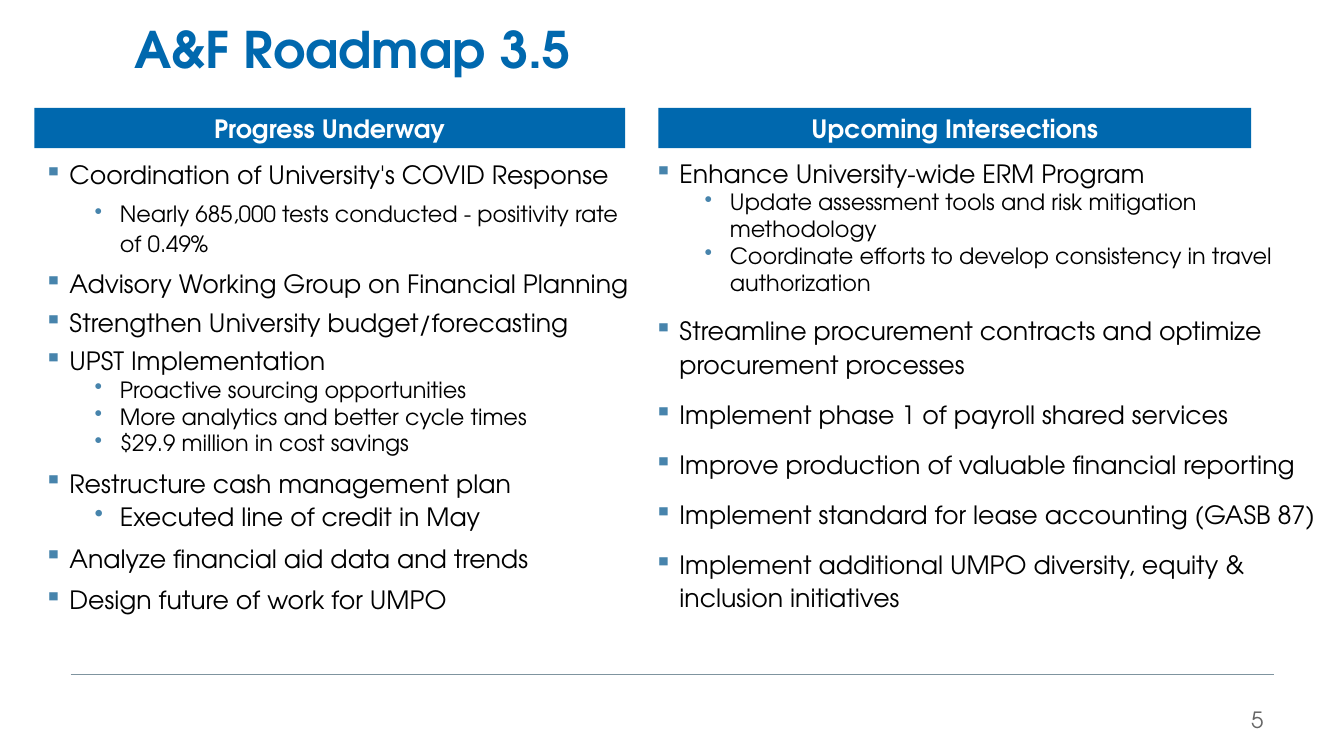
"""Build the A&F Roadmap 3.5 slide with two bulleted columns."""
from dataclasses import dataclass

from lxml.etree import SubElement
from pptx import Presentation
from pptx.dml.color import RGBColor
from pptx.enum.shapes import MSO_CONNECTOR, MSO_SHAPE
from pptx.enum.text import MSO_ANCHOR, MSO_AUTO_SIZE, PP_ALIGN
from pptx.oxml.ns import qn
from pptx.util import Pt

PX = 9144


@dataclass(frozen=True)
class Theme:
    font: str = "TeX Gyre Adventor"
    blue: str = "0068AE"
    bullet: str = "4784AC"
    rule: str = "7F949F"
    text: str = "000000"
    white: str = "FFFFFF"
    grey: str = "666666"
    title: int = 36
    body: int = 18
    detail: int = 16


@dataclass(frozen=True)
class Item:
    text: str
    level: int = 0
    size: int = Theme.body
    line: float = 1.1
    before: int = 6
    after: int = 0


def detail(text, size=Theme.detail, line=1.0, before=0, after=0):
    return Item(text, 1, size, line, before, after)


def spaced(text):
    return Item(text, after=6)


class Deck:
    def __init__(self, theme, width, height):
        self.theme = theme
        self.prs = Presentation()
        self.prs.slide_width, self.prs.slide_height = width * PX, height * PX
        self.s = self.prs.slides.add_slide(self.prs.slide_layouts[5])

    def box(self, x, y, w, h):
        return self.s.shapes.add_textbox(*(v * PX for v in (x, y, w, h)))

    def frame(self, sp, anchor):
        tf = sp.text_frame
        tf.word_wrap = True
        tf.auto_size = MSO_AUTO_SIZE.NONE
        tf.vertical_anchor = anchor
        return tf

    def run(self, p, text, size, color, bold=False):
        r = p.add_run()
        r.text = text
        r.font.name = self.theme.font
        r.font.size = Pt(size)
        r.font.bold = bold
        r.font.color.rgb = RGBColor.from_string(color)

    def title(self, text, x, y, w, h):
        sp = self.s.shapes.title
        sp.left, sp.top, sp.width, sp.height = (v * PX for v in (x, y, w, h))
        p = self.frame(sp, MSO_ANCHOR.MIDDLE).paragraphs[0]
        p.alignment = PP_ALIGN.LEFT
        self.run(p, text, self.theme.title, self.theme.blue, True)

    def header(self, text, x, y, w, h):
        sp = self.s.shapes.add_shape(MSO_SHAPE.RECTANGLE, *(v * PX for v in (x, y, w, h)))
        sp.shadow.inherit = False
        sp.fill.solid()
        sp.fill.fore_color.rgb = RGBColor.from_string(self.theme.blue)
        sp.line.fill.background()
        p = self.frame(sp, MSO_ANCHOR.BOTTOM).paragraphs[0]
        p.alignment = PP_ALIGN.CENTER
        p.line_spacing = 1.1
        p.space_after = Pt(4.5)
        self.run(p, text, self.theme.body, self.theme.white, True)

    def bullet(self, p, level):
        pPr = p._p.get_or_add_pPr()
        pPr.set("marL", str((25 + 50 * level) * PX))
        pPr.set("indent", str(-25 * PX))
        color = SubElement(pPr, qn("a:buClr"))
        SubElement(color, qn("a:srgbClr"), val=self.theme.bullet)
        SubElement(pPr, qn("a:buChar"), char="▪•"[level])

    def bullets(self, items, x, y, w, h):
        tf = self.frame(self.box(x, y, w, h), MSO_ANCHOR.TOP)
        for i, item in enumerate(items):
            p = tf.add_paragraph() if i else tf.paragraphs[0]
            p.level = item.level
            self.bullet(p, item.level)
            p.line_spacing = item.line
            p.space_before = Pt(item.before if i else 0)
            p.space_after = Pt(item.after)
            self.run(p, item.text, item.size, self.theme.text)

    def rule(self, x1, x2, y):
        sp = self.s.shapes.add_connector(MSO_CONNECTOR.STRAIGHT, x1 * PX, y * PX, x2 * PX, y * PX)
        sp.line.color.rgb = RGBColor.from_string(self.theme.rule)
        sp.line.width = Pt(0.5)
        SubElement(sp._element.spPr, qn("a:effectLst"))

    def page_number(self, text, x, y, w, h):
        p = self.frame(self.box(x, y, w, h), MSO_ANCHOR.MIDDLE).paragraphs[0]
        p.alignment = PP_ALIGN.RIGHT
        self.run(p, text, self.theme.detail, self.theme.grey)


PROGRESS = [
    Item("Coordination of University's COVID Response"),
    detail("Nearly 685,000 tests conducted - positivity rate of 0.49%", line=1.1, before=6),
    Item("Advisory Working Group on Financial Planning"),
    Item("Strengthen University budget/forecasting", line=1.0),
    Item("UPST Implementation", line=1.0),
    detail("Proactive sourcing opportunities"),
    detail("More analytics and better cycle times"),
    detail("$29.9 million in cost savings"),
    Item("Restructure cash management plan"),
    detail("Executed line of credit in May", size=Theme.body, line=1.1),
    Item("Analyze financial aid data and trends"),
    Item("Design future of work for UMPO"),
]
UPCOMING = [
    Item("Enhance University-wide ERM Program"),
    detail("Update assessment tools and risk mitigation methodology"),
    detail("Coordinate efforts to develop consistency in travel authorization", after=6),
    spaced("Streamline procurement contracts and optimize procurement processes"),
    spaced("Implement phase 1 of payroll shared services"),
    spaced("Improve production of valuable financial reporting"),
    spaced("Implement standard for lease accounting (GASB 87)"),
    spaced("Implement additional UMPO diversity, equity & inclusion initiatives"),
]


def main():
    deck = Deck(Theme(), 1333, 750)
    deck.rule(70, 1264, 669)
    deck.title("A&F Roadmap 3.5", 123, 6, 1141, 83)
    deck.header("Progress Underway", 34, 107, 586, 40)
    deck.bullets(PROGRESS, 34, 150, 605, 518)
    deck.header("Upcoming Intersections", 653, 107, 588, 40)
    deck.bullets(UPCOMING, 639, 149, 679, 517)
    deck.page_number("5", 1163, 700, 100, 28)
    deck.prs.save("out.pptx")


if __name__ == "__main__":
    main()
